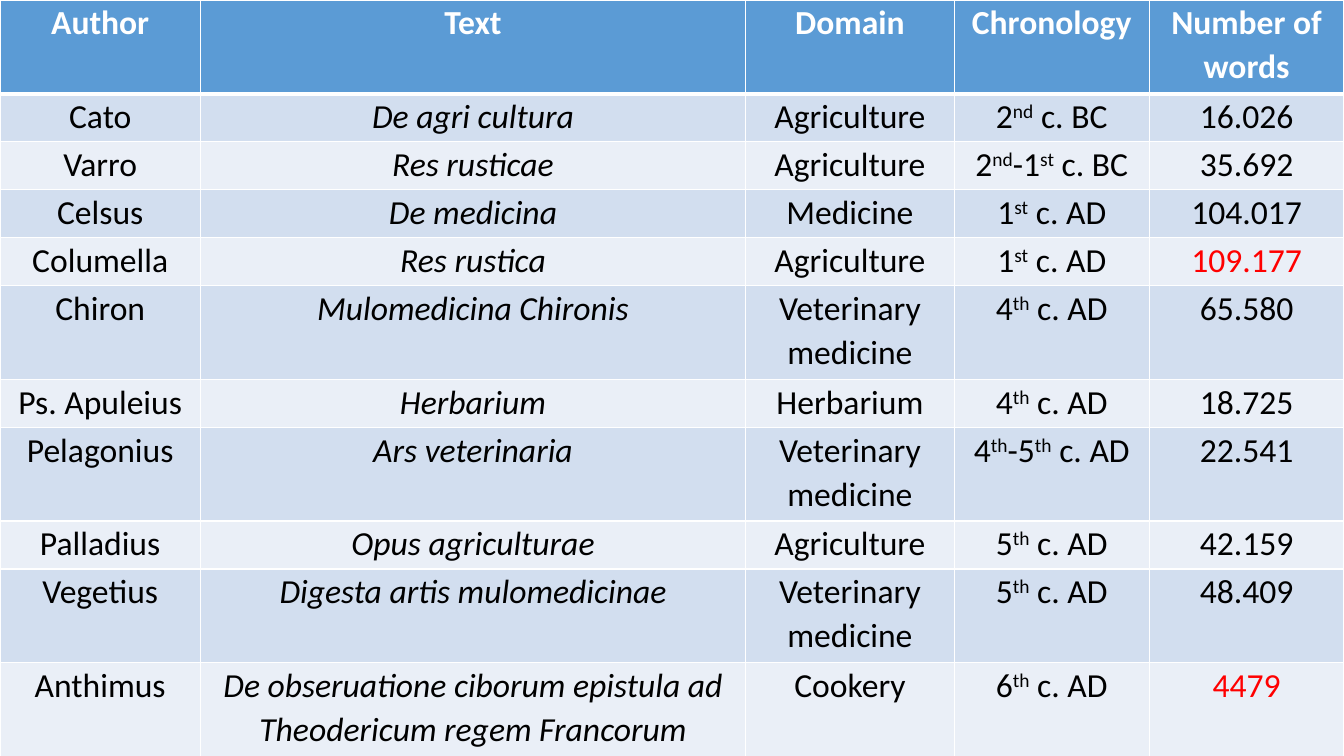
"""Build a slide with a table of Latin technical texts."""
import lxml.etree
import pptx
import pptx.dml.color
import pptx.enum.text
import pptx.oxml.ns
import pptx.util

Cm = pptx.util.Cm
qn = pptx.oxml.ns.qn


def paint(color, value):
    """Set a colour from a hex string."""
    color.rgb = pptx.dml.color.RGBColor.from_string(value)


def write_text(para, text, color="000000", bold=False, italic=False, size=24):
    """Write centred text, raising the parts between carets."""
    para.alignment = pptx.enum.text.PP_ALIGN.CENTER
    para.line_spacing = 1.07
    for index, part in enumerate(text.split("^")):
        span = para.add_run()
        span.text = part
        span.font.name = "Calibri"
        span.font.size = pptx.util.Pt(size)
        span.font.bold = bold
        span.font.italic = italic
        paint(span.font.color, color)
        if index % 2:
            span.font._element.set("baseline", "30000")


HEADER = ("Author", "Text", "Domain", "Chronology", "Number of words")
WORKS = [
    ("Cato", "De agri cultura", "Agriculture", "2^nd^ c. BC", "16.026"),
    ("Varro", "Res rusticae", "Agriculture", "2^nd^-1^st^ c. BC", "35.692"),
    ("Celsus", "De medicina", "Medicine", "1^st^ c. AD", "104.017"),
    ("Columella", "Res rustica", "Agriculture", "1^st^ c. AD", "109.177"),
    ("Chiron", "Mulomedicina Chironis", "Veterinary medicine", "4^th^ c. AD", "65.580"),
    ("Ps. Apuleius", "Herbarium", "Herbarium", "4^th^ c. AD", "18.725"),
    ("Pelagonius", "Ars veterinaria", "Veterinary medicine", "4^th^-5^th^ c. AD", "22.541"),
    ("Palladius", "Opus agriculturae", "Agriculture", "5^th^ c. AD", "42.159"),
    ("Vegetius", "Digesta artis mulomedicinae", "Veterinary medicine", "5^th^ c. AD", "48.409"),
    ("Anthimus", "De obseruatione ciborum epistula ad Theodericum regem Francorum",
     "Cookery", "6^th^ c. AD", "4479"),
]
EXTREMES = ("109.177", "4479")
COLUMN_WIDTHS = (5.05, 13.74, 5.26, 4.91, 4.91)
TALL_ROWS = (0, 5, 7, 9, 10)

deck = pptx.Presentation()
deck.slide_width = Cm(33.87)
deck.slide_height = Cm(19.05)
page = deck.slides.add_slide(deck.slide_layouts[6])
page.background.fill.solid()
paint(page.background.fill.fore_color, "ADB9CA")

rows = [HEADER] + WORKS
table = page.shapes.add_table(
    len(rows), len(HEADER), 0, 0, deck.slide_width, deck.slide_height).table
for column, width in zip(table.columns, COLUMN_WIDTHS):
    column.width = Cm(width)

for r, values in enumerate(rows):
    table.rows[r].height = Cm(2.36 if r in TALL_ROWS else 1.21)
    for c, text in enumerate(values):
        cell = table.cell(r, c)
        cell.margin_left = cell.margin_right = Cm(0.18)
        cell.margin_top = cell.margin_bottom = 0

        properties = cell._tc.get_or_add_tcPr()
        for side in ("lnL", "lnR", "lnT", "lnB"):
            under_header = (r, side) in ((0, "lnB"), (1, "lnT"))
            width = pptx.util.Pt(3 if under_header else 1)
            line = lxml.etree.SubElement(properties, qn("a:" + side), w=str(int(width)))
            fill = lxml.etree.SubElement(line, qn("a:solidFill"))
            lxml.etree.SubElement(fill, qn("a:srgbClr"), val="FFFFFF")

        cell.fill.solid()
        para = cell.text_frame.paragraphs[0]
        if r == 0:
            paint(cell.fill.fore_color, "5B9BD5")
            write_text(para, text, color="FFFFFF", bold=True)
        else:
            paint(cell.fill.fore_color, "D2DEEF" if r % 2 else "EAEFF7")
            write_text(para, text, italic=c == 1,
                       color="FF0000" if text in EXTREMES else "000000")

deck.save("out.pptx")
